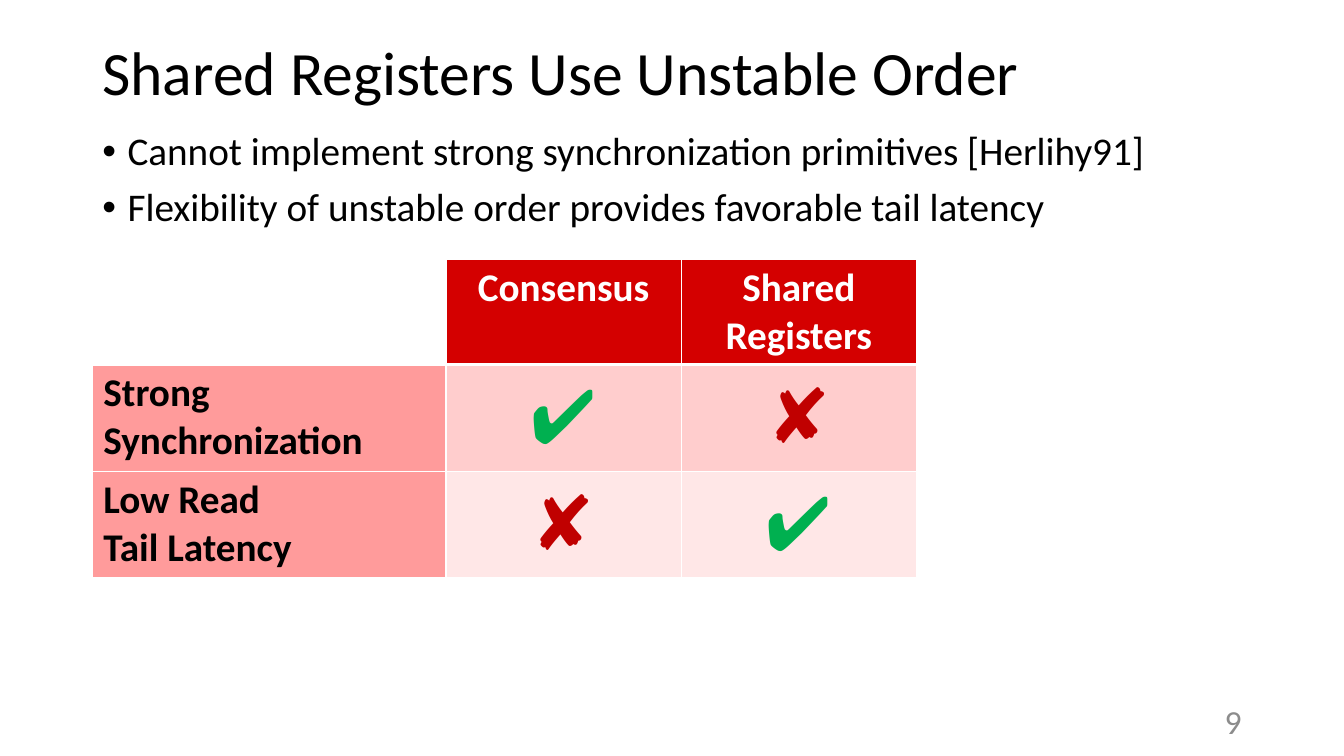
import pptx
import pptx.dml.color
import pptx.enum.text
import pptx.oxml
import pptx.oxml.ns
import pptx.util

ALIGN = pptx.enum.text.PP_ALIGN
ANCHOR = pptx.enum.text.MSO_ANCHOR
BLACK, WHITE, GREY = "000000", "FFFFFF", "8C8C8C"
HEADER, LABEL = "D40000", "FF9B9B"
YES, NO = ("✔", "00B050"), ("✘", "C00000")


def colour(value):
    return pptx.dml.color.RGBColor.from_string(value)


def element(xml):
    """Parse one element, adding the drawing namespace to its opening tag."""
    return pptx.oxml.parse_xml(xml.replace(">", f" {pptx.oxml.ns.nsdecls('a')}>", 1))


class SlideBuilder:
    """Holds the style and places elements on a grid of 160 columns by 90 rows."""

    font = "Calibri"
    columns, rows = 160, 90

    def __init__(self, deck):
        self.column = deck.slide_width / self.columns
        self.row = deck.slide_height / self.rows
        self.page = deck.slides.add_slide(deck.slide_layouts[6])

    def across(self, count):
        return pptx.util.Emu(round(count * self.column))

    def down(self, count):
        return pptx.util.Emu(round(count * self.row))

    def add_lines(self, frame, lines, size, fill, align=ALIGN.LEFT, bold=False):
        for index, line in enumerate(lines):
            para = frame.add_paragraph() if index else frame.paragraphs[0]
            para.alignment = align
            span = para.add_run()
            span.text = line
            span.font.name = self.font
            span.font.size = pptx.util.Pt(size)
            span.font.bold = bold
            span.font.color.rgb = colour(fill)

    def text(self, left, top, width, height, lines, size, fill=BLACK,
             align=ALIGN.LEFT, anchor=ANCHOR.MIDDLE, spacing=1.0):
        box = self.page.shapes.add_textbox(
            self.across(left), self.down(top), self.across(width), self.down(height))
        frame = box.text_frame
        frame.word_wrap = True
        frame.vertical_anchor = anchor
        self.add_lines(frame, lines, size, fill, align)
        for para in frame.paragraphs:
            para.line_spacing = spacing
        return frame

    def bullets(self, *area, lines, size):
        frame = self.text(*area, lines, size, anchor=ANCHOR.TOP, spacing=0.9)
        indent = pptx.util.Inches(0.25)
        for para in frame.paragraphs:
            para.space_before = pptx.util.Pt(10)
            properties = para._p.get_or_add_pPr()
            properties.set("marL", str(indent))
            properties.set("indent", str(-indent))
            properties.append(element('<a:buFont typeface="Arial"></a:buFont>'))
            properties.append(element('<a:buChar char="•"></a:buChar>'))

    def table(self, left, top, widths, heights):
        grid = self.page.shapes.add_table(
            len(heights), len(widths), self.across(left), self.down(top),
            self.across(sum(widths)), self.down(sum(heights))).table
        grid.first_row = grid.horz_banding = False
        for column, width in zip(grid.columns, widths):
            column.width = self.across(width)
        for row, height in zip(grid.rows, heights):
            row.height = self.down(height)
        return grid

    def cell(self, cell, fill, heavy=""):
        """Borders go in before the fill, as the schema orders them."""
        properties = cell._tc.get_or_add_tcPr()
        for side in "LRTB":
            width = pptx.util.Pt(3 if side in heavy else 1)
            properties.append(element(
                f'<a:ln{side} w="{width}"><a:solidFill><a:srgbClr val="{WHITE}"/>'
                f'</a:solidFill></a:ln{side}>'))
        if fill:
            cell.fill.solid()
            cell.fill.fore_color.rgb = colour(fill)
        else:
            cell.fill.background()
        cell.margin_left = cell.margin_right = pptx.util.Inches(0.11)
        cell.margin_top = cell.margin_bottom = pptx.util.Inches(0.05)


def main():
    deck = pptx.Presentation()
    deck.slide_width = pptx.util.Inches(13.33)
    deck.slide_height = pptx.util.Inches(7.5)
    slide = SlideBuilder(deck)

    # Title and bullets
    slide.text(11, 0.24, 138, 17.4, ["Shared Registers Use Unstable Order"], 44, spacing=0.9)
    slide.bullets(11, 15.1, 138, 57.1, size=28, lines=[
        "Cannot implement strong synchronization primitives [Herlihy91]",
        "Flexibility of unstable order provides favorable tail latency",
    ])

    # Slide number
    slide.text(113, 83.4, 36, 4.8, ["9"], 24, GREY, ALIGN.RIGHT)

    # Comparison table: header row
    grid = slide.table(11, 30.9, [42.1, 28, 28], [12.5, 12.7, 12.7])
    slide.cell(grid.cell(0, 0), None, heavy="B")
    for column, heading in enumerate(["Consensus", "Shared Registers"], start=1):
        cell = grid.cell(0, column)
        slide.cell(cell, HEADER, heavy="B")
        slide.add_lines(cell.text_frame, [heading], 28, WHITE, ALIGN.CENTER, bold=True)

    # Comparison table: one property a row
    properties = [
        (["Strong Synchronization"], "FFCDCD", [YES, NO]),
        (["Low Read", "Tail Latency"], "FFE7E7", [NO, YES]),
    ]
    for row, (label, band, marks) in enumerate(properties, start=1):
        cell = grid.cell(row, 0)
        heavy = "T" if row == 1 else ""
        slide.cell(cell, LABEL, heavy)
        slide.add_lines(cell.text_frame, label, 28, BLACK, bold=True)
        for column, (mark, tint) in enumerate(marks, start=1):
            cell = grid.cell(row, column)
            slide.cell(cell, band, heavy)
            cell.vertical_anchor = ANCHOR.MIDDLE
            slide.add_lines(cell.text_frame, [mark], 54, tint, ALIGN.CENTER)

    deck.save("out.pptx")


if __name__ == "__main__":
    main()
